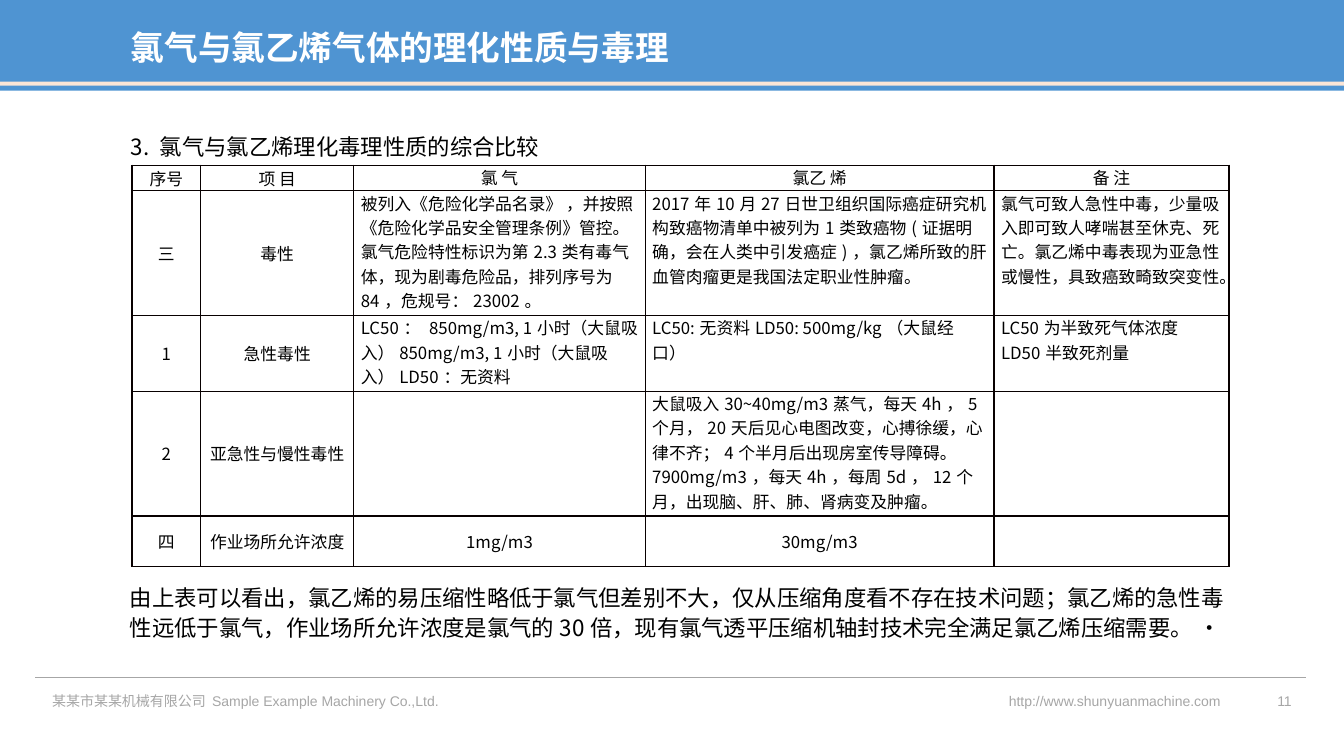
from lxml.etree import SubElement
from pptx import Presentation
from pptx.dml.color import RGBColor
from pptx.enum.shapes import MSO_CONNECTOR, MSO_SHAPE
from pptx.enum.text import MSO_ANCHOR, PP_ALIGN
from pptx.oxml import parse_xml
from pptx.oxml.ns import nsdecls, qn
from pptx.util import Inches, Pt

BLUE = RGBColor(0x4F, 0x94, 0xD2)
CREAM = RGBColor(0xFB, 0xE5, 0xD6)
GRAY = RGBColor(0xA6, 0xA6, 0xA6)
BLACK = RGBColor(0, 0, 0)
WHITE = RGBColor(255, 255, 255)
BORDER = "080000"
CJK = "Noto Sans CJK SC"
LATIN = "Arial"

TITLE = "氯气与氯乙烯气体的理化性质与毒理"
HEADING = "3. 氯气与氯乙烯理化毒理性质的综合比较"
SUMMARY = (
    "由上表可以看出，氯乙烯的易压缩性略低于氯气但差别不大，仅从压缩角度看不存在技术问题；"
    "氯乙烯的急性毒性远低于氯气，作业场所允许浓度是氯气的30倍，"
    "现有氯气透平压缩机轴封技术完全满足氯乙烯压缩需要。·"
)
FOOTER = [  # text, left, width, alignment
    ("某某市某某机械有限公司 Sample Example Machinery Co.,Ltd.", 0.42, 5.53, PP_ALIGN.LEFT),
    ("http://www.shunyuanmachine.com", 9.87, 2.37, PP_ALIGN.CENTER),
    ("11", 12.23, 0.68, PP_ALIGN.RIGHT),
]
COL_WIDTHS = [0.68, 1.52, 2.89, 3.46, 2.33]
ROW_HEIGHTS = [0.25, 1.24, 0.75, 1.24, 0.5]
ROWS = [
    ["序号", "项 目", "氯 气", "氯乙 烯", "备 注"],
    ["三", "毒性",
     "被列入《危险化学品名录》 ，并按照《危险化学品安全管理条例》管控。"
     "氯气危险特性标识为第2.3类有毒气体，现为剧毒危险品，排列序号为84，危规号：23002。",
     "2017年10月27日世卫组织国际癌症研究机构致癌物清单中被列为1类致癌物"
     "(证据明确，会在人类中引发癌症)，氯乙烯所致的肝血管肉瘤更是我国法定职业性肿瘤。",
     "氯气可致人急性中毒，少量吸入即可致人哮喘甚至休克、死亡。"
     "氯乙烯中毒表现为亚急性或慢性，具致癌致畸致突变性。"],
    ["1", "急性毒性",
     "LC50： 850mg/m3, 1小时（大鼠吸入）850mg/m3, 1小时（大鼠吸入）LD50：无资料",
     "LC50:无资料LD50: 500mg/kg（大鼠经口）",
     "LC50为半致死气体浓度LD50半致死剂量"],
    ["2", "亚急性与慢性毒性", "",
     "大鼠吸入30~40mg/m3蒸气，每天4h，5个月，20天后见心电图改变，心搏徐缓，心律不齐；"
     "4个半月后出现房室传导障碍。7900mg/m3，每天4h，每周5d，12个月，"
     "出现脑、肝、肺、肾病变及肿瘤。", ""],
    ["四", "作业场所允许浓度", "1mg/m3", "30mg/m3", ""],
]


def write(tf, text, size, color, font=CJK, align=PP_ALIGN.LEFT, bold=False, spacing=None):
    p = tf.paragraphs[0]
    p.alignment = align
    if spacing:
        p.line_spacing = spacing
    r = p.add_run()
    r.text = text
    r.font.size = Pt(size)
    r.font.bold = bold
    r.font.color.rgb = color
    r.font.name = font
    SubElement(r.font._element, qn("a:ea")).set("typeface", CJK)


def add_text(s, box, text, size, color, **style):
    tf = s.shapes.add_textbox(*map(Inches, box)).text_frame
    tf.word_wrap = True
    write(tf, text, size, color, **style)


def add_band(s, top, height, color):
    sp = s.shapes.add_shape(MSO_SHAPE.RECTANGLE, 0, Inches(top), Inches(13.33), Inches(height))
    sp.shadow.inherit = False
    sp.fill.solid()
    sp.fill.fore_color.rgb = color
    sp.line.fill.background()


def add_borders(cell):
    tcPr = cell._tc.get_or_add_tcPr()
    for i, side in enumerate(("lnL", "lnR", "lnT", "lnB")):
        tcPr.insert(i, parse_xml(
            f'<a:{side} {nsdecls("a")} w="{Pt(1)}"><a:solidFill>'
            f'<a:srgbClr val="{BORDER}"/></a:solidFill></a:{side}>'))


def add_comparison(s):
    tb = s.shapes.add_table(
        len(ROWS), len(COL_WIDTHS), Inches(1.31), Inches(1.64),
        Inches(sum(COL_WIDTHS)), Inches(sum(ROW_HEIGHTS))).table
    tb.first_row = tb.horz_banding = False
    for col, width in zip(tb.columns, COL_WIDTHS):
        col.width = Inches(width)
    last = len(ROWS) - 1
    for i, (row, height) in enumerate(zip(ROWS, ROW_HEIGHTS)):
        tb.rows[i].height = Inches(height)
        for j, text in enumerate(row):
            cell = tb.cell(i, j)
            cell.fill.background()
            add_borders(cell)
            cell.margin_left = cell.margin_right = Inches(0.07)
            cell.margin_top = cell.margin_bottom = 0
            if j < 2 or i == last:
                cell.vertical_anchor = MSO_ANCHOR.MIDDLE
            centered = j < 2 or i in (0, last)
            if text:
                write(cell.text_frame, text, 12, BLACK,
                      align=PP_ALIGN.CENTER if centered else PP_ALIGN.LEFT)


def main():
    prs = Presentation()
    prs.slide_width, prs.slide_height = Inches(13.33), Inches(7.5)
    s = prs.slides.add_slide(prs.slide_layouts[6])

    add_band(s, 0, 0.9, BLUE)
    add_band(s, 0.81, 0.04, CREAM)
    rule = s.shapes.add_connector(
        MSO_CONNECTOR.STRAIGHT, Inches(0.35), Inches(6.72), Inches(12.95), Inches(6.72))
    rule.line.color.rgb = GRAY
    rule.line.width = Pt(1)
    SubElement(rule._element.spPr, qn("a:effectLst"))
    for text, left, width, align in FOOTER:
        add_text(s, (left, 6.82, width, 0.27), text, 10, GRAY, font=LATIN, align=align)

    add_text(s, (1.2, 0.22, 6.36, 0.5), TITLE, 24, WHITE, align=PP_ALIGN.JUSTIFY, bold=True)
    add_text(s, (1.2, 1.09, 11.26, 0.56), HEADING, 16, BLACK, spacing=1.7)
    add_comparison(s)
    add_text(s, (1.19, 5.72, 11.26, 0.69), SUMMARY, 16, BLACK, spacing=1.1)
    prs.save("out.pptx")


if __name__ == "__main__":
    main()
